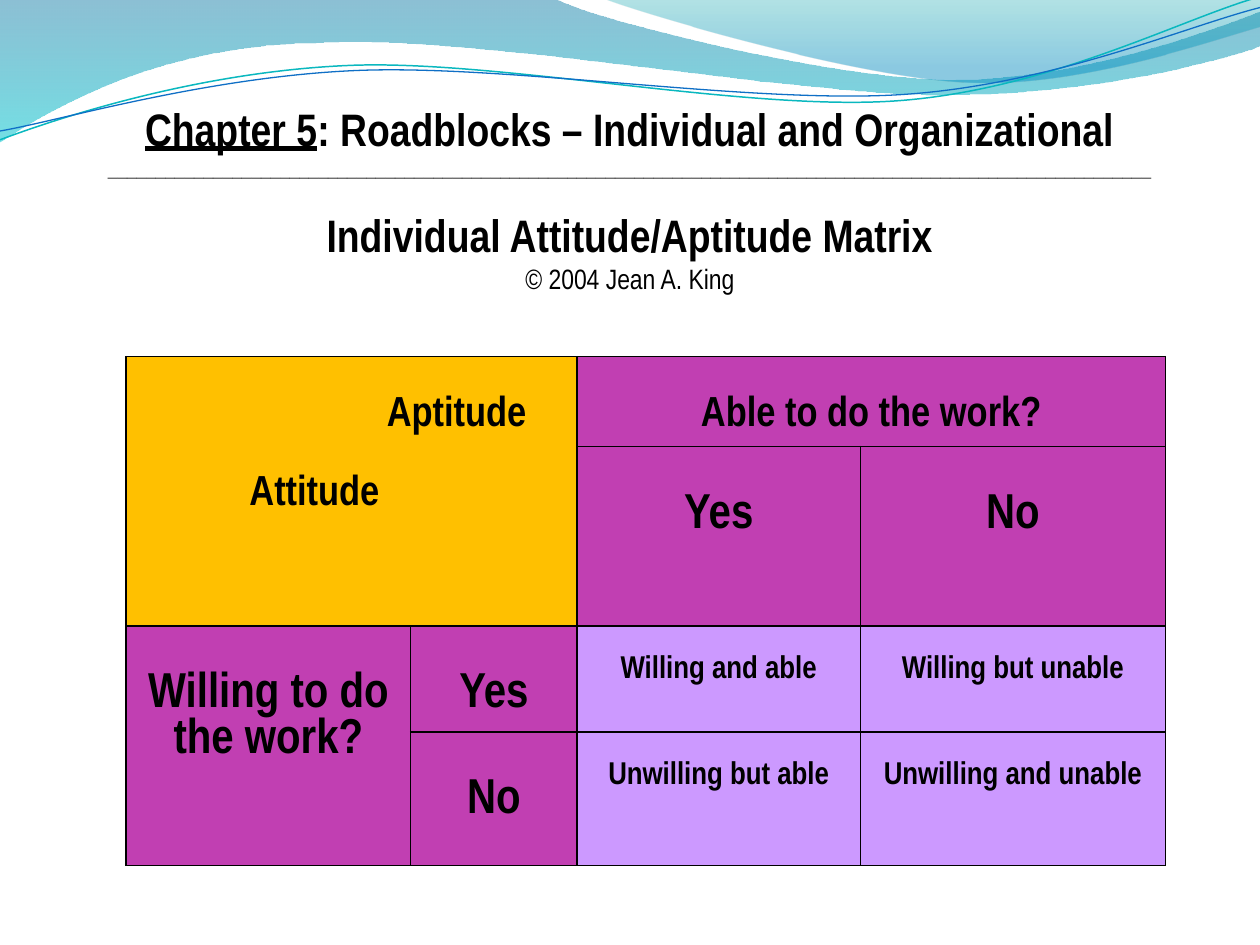
from dataclasses import dataclass
from itertools import product

from lxml import etree
from pptx import Presentation
from pptx import util as u
from pptx.dml.color import RGBColor
from pptx.enum import text
from pptx.oxml.ns import qn


@dataclass(frozen=True)
class Theme:
    """Colours, font and type sizes of the slide."""
    font: str = "Arial Narrow"
    ink: str = "000000"
    corner: str = "FFC000"
    header: str = "C13FB2"
    body: str = "CC99FF"
    teal: str = "0AB8BF"
    blue: str = "0F6FC6"
    left_wave: tuple = ((0, "0074A1", 45), (1, "00C6CF", 55))
    right_wave: tuple = ((0, "00A1A9", 30), (0.8, "008BBF", 45))
    title: int = 26
    rule: int = 12
    credit: int = 16
    axis: int = 24
    label: int = 28
    entry: int = 18


THEME = Theme()
LINE_HEIGHT = 0.94
LEFT_WAVE = [
    (0, -0.01), (4.4, -0.01),
    (4.76, 0.17, 6.64, 0.63, 7.58, 0.63), (8.53, 0.63, 9.58, 0.26, 10, 0.09),
    (10.01, 0.36),
    (9.83, 0.44, 8.7, 0.76, 7.46, 0.75), (6.22, 0.75, 3.82, 0.28, 2.57, 0.34),
    (1.29, 0.35, 0.46, 0.83, -0.01, 1.13),
]
RIGHT_WAVE = [
    (4.79, -0.01),
    (5.09, 0.11, 6.82, 0.62, 7.69, 0.65), (8.56, 0.69, 9.61, 0.32, 10, 0.21),
    (10, 0),
]
TEAL_LINE = [
    (0, 1.11),
    (0.48, 0.93, 1.58, 0.57, 2.77, 0.52), (3.95, 0.47, 5.93, 0.89, 7.13, 0.8),
    (8.33, 0.71, 9.38, 0.15, 9.98, -0.02),
]
BLUE_LINE = [
    (0, 1.04),
    (0.47, 0.96, 1.64, 0.61, 2.83, 0.56), (4.03, 0.51, 5.97, 0.83, 7.17, 0.75),
    (8.36, 0.67, 9.41, 0.21, 10, 0.06),
]


def add_outline(page, steps, close):
    """Add a freeform of straight and Bezier steps without shadow."""
    anchors = [(u.Inches(step[-2]), u.Inches(step[-1])) for step in steps]
    builder = page.shapes.build_freeform(*anchors[0])
    builder.add_line_segments(anchors[1:], close=close)
    shape = builder.convert_to_shape()
    shape.shadow.inherit = False
    segments = list(shape.element.spPr.iter(qn("a:lnTo")))
    for segment, step in zip(segments, steps[1:]):
        if len(step) == 6:
            segment.tag = qn("a:cubicBezTo")
            handles = zip(step[0:4:2], step[1:4:2])
            for place, (x, y) in enumerate(handles):
                handle = etree.Element(qn("a:pt"), x=str(u.Inches(x) - shape.left),
                                       y=str(u.Inches(y) - shape.top))
                segment.insert(place, handle)
    return shape


def add_wave(page, steps, stops):
    """Add a wave filled with a translucent vertical gradient."""
    wave = add_outline(page, steps, True)
    wave.line.fill.background()
    wave.fill.gradient()
    wave.fill.gradient_angle = 270
    for stop, (position, color, _) in zip(wave.fill.gradient_stops, stops):
        stop.position = position
        stop.color.rgb = RGBColor.from_string(color)
    tints = wave.element.spPr.iter(qn("a:srgbClr"))
    for tint, (_, _, opacity) in zip(tints, stops):
        etree.SubElement(tint, qn("a:alpha"), val=str(opacity * 1000))


def add_curve(page, steps, color, width):
    """Add an open curved line."""
    curve = add_outline(page, steps, False)
    curve.fill.background()
    curve.line.color.rgb = RGBColor.from_string(color)
    curve.line.width = u.Pt(width)


def style(para, size, bold=True, align=text.PP_ALIGN.CENTER):
    """Set the type and alignment of a paragraph."""
    para.alignment = align
    para.font.name = THEME.font
    para.font.size = u.Pt(size)
    para.font.bold = bold
    para.font.color.rgb = RGBColor.from_string(THEME.ink)


def add_heading(page):
    """Add the chapter line, its rule, the matrix title and the credit."""
    box = page.shapes.add_textbox(u.Inches(0.5), u.Inches(0.75), u.Inches(9), u.Inches(1.58))
    frame = box.text_frame
    frame.word_wrap = True
    chapter = frame.paragraphs[0]
    style(chapter, THEME.title)
    span = chapter.add_run()
    span.text = "Chapter 5"
    span.font.underline = True
    chapter.add_run().text = ": Roadblocks – Individual and Organizational"
    for words, size, bold, gap in (
        ("_" * 109, THEME.rule, True, 0),
        ("Individual Attitude/Aptitude Matrix", THEME.title, True, 15),
        ("© 2004 Jean A. King", THEME.credit, False, 0),
    ):
        para = frame.add_paragraph()
        para.text = words
        para.space_before = u.Pt(gap)
        style(para, size, bold)


def add_borders(cell):
    """Draw a thin line on each side of a cell."""
    properties = cell._tc.get_or_add_tcPr()
    for place, side in enumerate(("a:lnL", "a:lnR", "a:lnT", "a:lnB")):
        line = etree.Element(qn(side), w=str(u.Pt(1)))
        fill = etree.SubElement(line, qn("a:solidFill"))
        etree.SubElement(fill, qn("a:srgbClr"), val=THEME.ink)
        properties.insert(place, line)


def fill_cell(cell, words, size, color):
    """Fill a cell and set its text one line below the top."""
    cell.fill.solid()
    cell.fill.fore_color.rgb = RGBColor.from_string(color)
    cell.margin_left = cell.margin_right = u.Inches(0.07)
    cell.margin_top, cell.margin_bottom = u.Pt(size * LINE_HEIGHT), 0
    cell.text_frame.text = words
    for para in cell.text_frame.paragraphs:
        style(para, size)


def add_matrix(page):
    """Add the table of attitude against aptitude."""
    widths, heights = (2.26, 1.32, 2.25, 2.42), (0.7, 1.25, 0.84, 1.06)
    table = page.shapes.add_table(
        len(heights), len(widths), u.Inches(1), u.Inches(2.83),
        u.Inches(sum(widths)), u.Inches(sum(heights))).table
    table.first_row = table.horz_banding = False
    for column, width in zip(table.columns, widths):
        column.width = u.Inches(width)
    for row, height in zip(table.rows, heights):
        row.height = u.Inches(height)
    for first, last in (((0, 0), (1, 1)), ((0, 2), (0, 3)), ((2, 0), (3, 0))):
        table.cell(*first).merge(table.cell(*last))
    for place in product(range(len(heights)), range(len(widths))):
        add_borders(table.cell(*place))

    corner = table.cell(0, 0)
    fill_cell(corner, "Aptitude\nAttitude", THEME.axis, THEME.corner)
    for para, indent in zip(corner.text_frame.paragraphs, (2, 0.91)):
        para.alignment = text.PP_ALIGN.LEFT
        para._p.get_or_add_pPr().set("marL", str(u.Inches(indent)))
    corner.text_frame.paragraphs[1].space_before = u.Pt(THEME.axis * LINE_HEIGHT)

    fill_cell(table.cell(0, 2), "Able to do the work?", THEME.axis, THEME.header)
    fill_cell(table.cell(2, 0), "Willing to do the work?", THEME.label, THEME.header)
    for index, answer in enumerate(("Yes", "No")):
        fill_cell(table.cell(1, index + 2), answer, THEME.label, THEME.header)
        fill_cell(table.cell(index + 2, 1), answer, THEME.label, THEME.header)
    entries = ("Willing and able", "Willing but unable",
               "Unwilling but able", "Unwilling and unable")
    for place, words in zip(product((2, 3), repeat=2), entries):
        fill_cell(table.cell(*place), words, THEME.entry, THEME.body)


def main():
    """Build and save the slide."""
    deck = Presentation()
    deck.slide_width, deck.slide_height = u.Inches(10), u.Inches(7.5)
    page = deck.slides.add_slide(deck.slide_layouts[6])
    add_wave(page, LEFT_WAVE, THEME.left_wave)
    add_wave(page, RIGHT_WAVE, THEME.right_wave)
    add_curve(page, TEAL_LINE, THEME.teal, 0.85)
    add_curve(page, BLUE_LINE, THEME.blue, 0.75)
    add_heading(page)
    add_matrix(page)
    deck.save("out.pptx")


if __name__ == "__main__":
    main()
